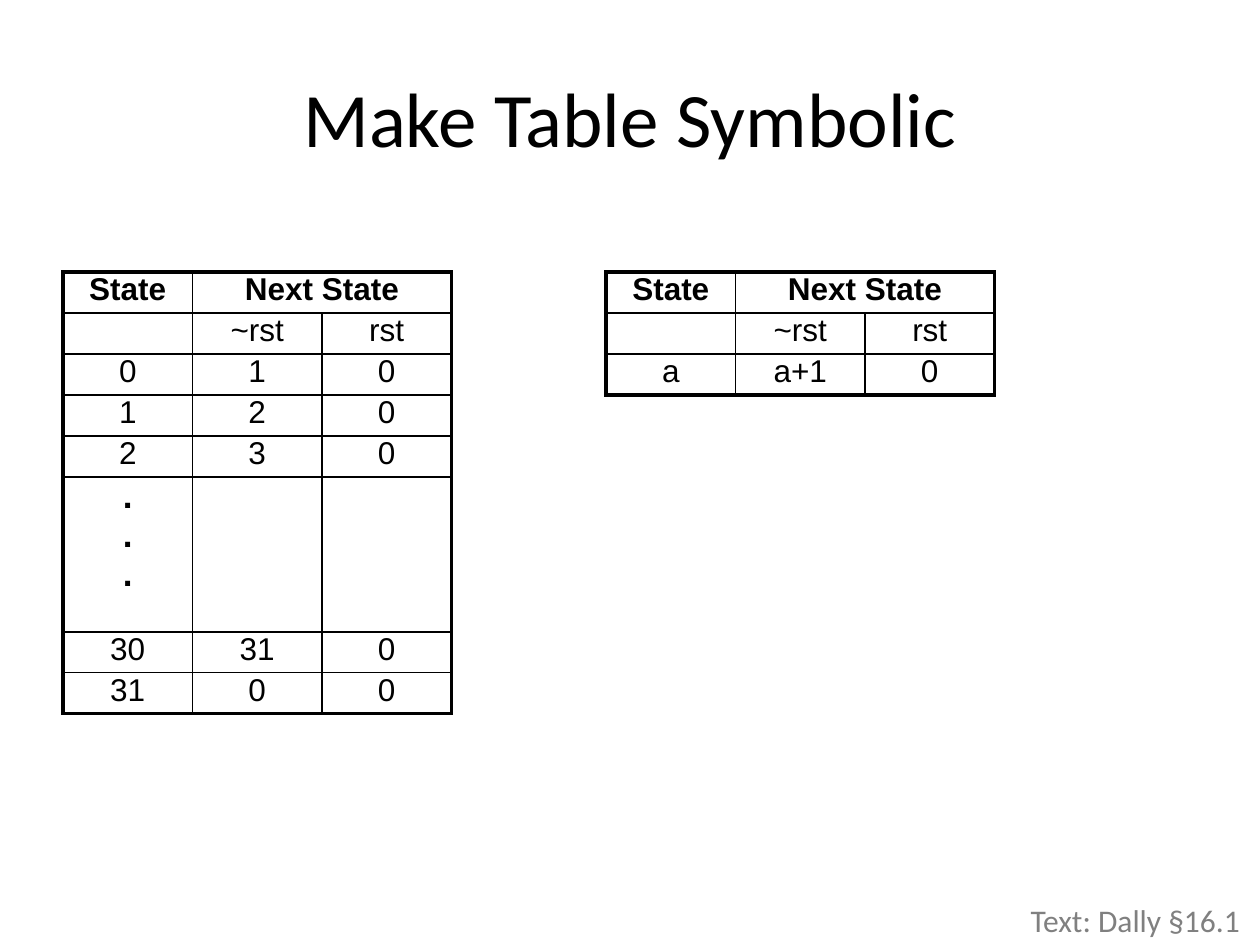
"""Build the "Make Table Symbolic" slide with two state tables."""
from lxml.etree import SubElement
from pptx import Presentation
from pptx.dml.color import RGBColor
from pptx.enum.text import MSO_ANCHOR, PP_ALIGN
from pptx.oxml.ns import qn
from pptx.util import Pt

COLORS = {"ink": "000000", "muted": "808080"}
THICK, THIN = 2.25, 1
COLUMN_WIDTH, ROW_HEIGHT, DOTS_HEIGHT = 74, 23.4, 88.6
TABLE_TOP = 155.5
HEADINGS = [["State", "Next State", ""], ["", "~rst", "rst"]]
COUNTER_ROWS = HEADINGS + [
    ["0", "1", "0"],
    ["1", "2", "0"],
    ["2", "3", "0"],
    [".\n.\n.", "", ""],
    ["30", "31", "0"],
    ["31", "0", "0"],
]
SYMBOLIC_ROWS = HEADINGS + [["a", "a+1", "0"]]


def write(frame, text, font="Arial", size=18, color="ink", bold=False, align=PP_ALIGN.CENTER):
    frame.text = text
    for paragraph in frame.paragraphs:
        paragraph.alignment = align
        paragraph.font.size = Pt(size)
        for run in paragraph.runs:
            run.font.name = font
            run.font.size = Pt(size)
            run.font.bold = bold
            run.font.color.rgb = RGBColor.from_string(COLORS[color])


class SlideBuilder:
    heading_font = "Calibri"

    def __init__(self, deck):
        self.slide = deck.slides.add_slide(deck.slide_layouts[5])

    def title(self, text, left, top, width, height):
        heading = self.slide.shapes.title
        heading.left, heading.top = Pt(left), Pt(top)
        heading.width, heading.height = Pt(width), Pt(height)
        heading.text_frame.vertical_anchor = MSO_ANCHOR.MIDDLE
        write(heading.text_frame, text, font=self.heading_font, size=44)

    def label(self, text, left, top, width, height):
        reference = self.slide.shapes.add_textbox(Pt(left), Pt(top), Pt(width), Pt(height))
        reference.text_frame.word_wrap = True
        write(reference.text_frame, text, font=self.heading_font, color="muted", align=PP_ALIGN.LEFT)

    def borders(self, cell, **widths):
        properties = cell._tc.get_or_add_tcPr()
        for side, width in widths.items():
            line = SubElement(properties, qn(f"a:ln{side}"), w=str(Pt(width)))
            fill = SubElement(line, qn("a:solidFill"))
            SubElement(fill, qn("a:srgbClr"), val=COLORS["ink"])

    def state_table(self, rows, left, top):
        heights = [DOTS_HEIGHT if "\n" in row[0] else ROW_HEIGHT for row in rows]
        columns = len(rows[0])
        table = self.slide.shapes.add_table(
            len(rows), columns, Pt(left), Pt(top), Pt(COLUMN_WIDTH * columns), Pt(sum(heights))
        ).table
        table.first_row = table.horz_banding = False
        for column in table.columns:
            column.width = Pt(COLUMN_WIDTH)
        table.cell(0, 1).merge(table.cell(0, 2))
        for r, (row, height) in enumerate(zip(rows, heights)):
            table.rows[r].height = Pt(height)
            for c, text in enumerate(row):
                cell = table.cell(r, c)
                if cell.is_spanned:
                    continue
                cell.margin_left = cell.margin_right = cell.margin_top = cell.margin_bottom = 0
                self.borders(
                    cell,
                    L=THICK if c == 0 else THIN,
                    R=THICK if c + cell.span_width == columns else THIN,
                    T=THICK if r == 0 else THIN,
                    B=THICK if r == len(rows) - 1 else THIN,
                )
                cell.fill.background()
                dots = "\n" in text
                write(cell.text_frame, text, size=20 if dots else 18, bold=dots or r == 0)


def main():
    deck = Presentation()
    deck.slide_width, deck.slide_height = Pt(720), Pt(540)
    builder = SlideBuilder(deck)
    builder.title("Make Table Symbolic", 36, 21.6, 648, 90)
    builder.state_table(COUNTER_ROWS, 36, TABLE_TOP)
    builder.state_table(SYMBOLIC_ROWS, 346.3, TABLE_TOP)
    builder.label("Text: Dally §16.1", 581.8, 511.2, 137.5, 28.8)
    deck.save("out.pptx")


if __name__ == "__main__":
    main()
